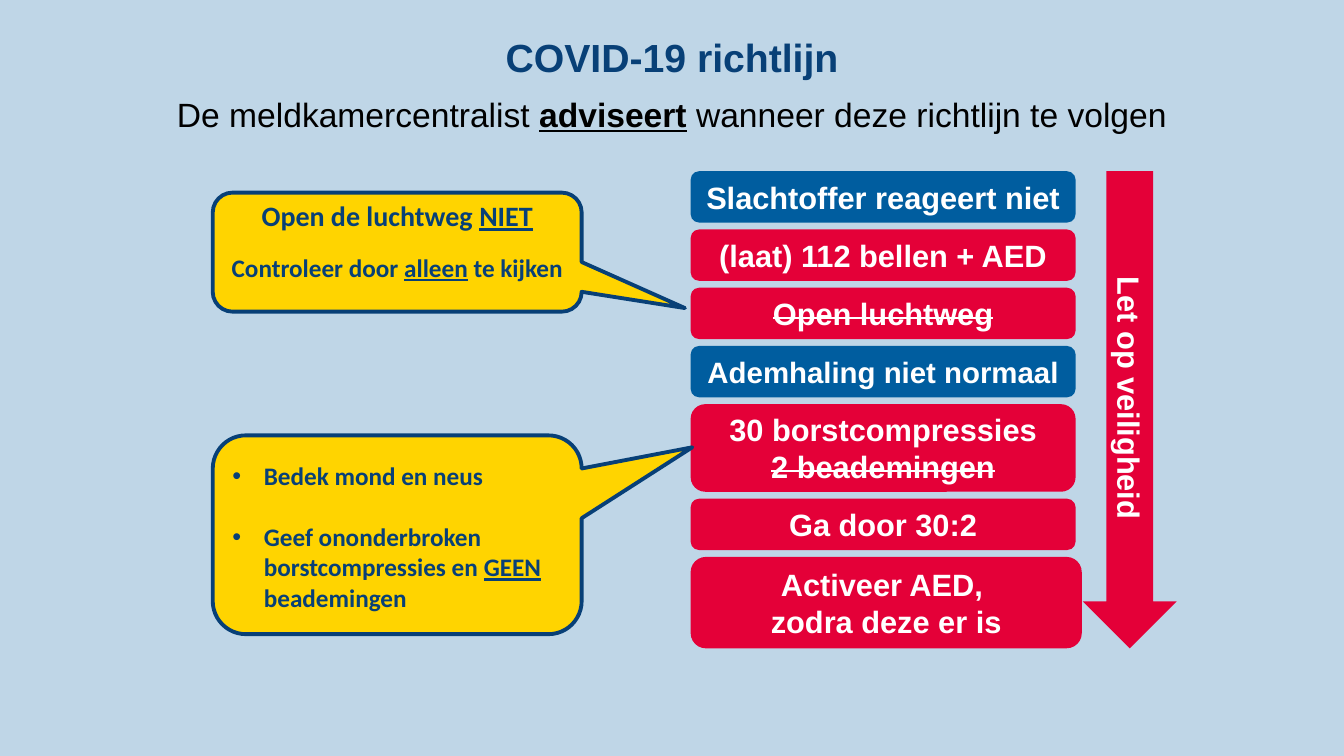
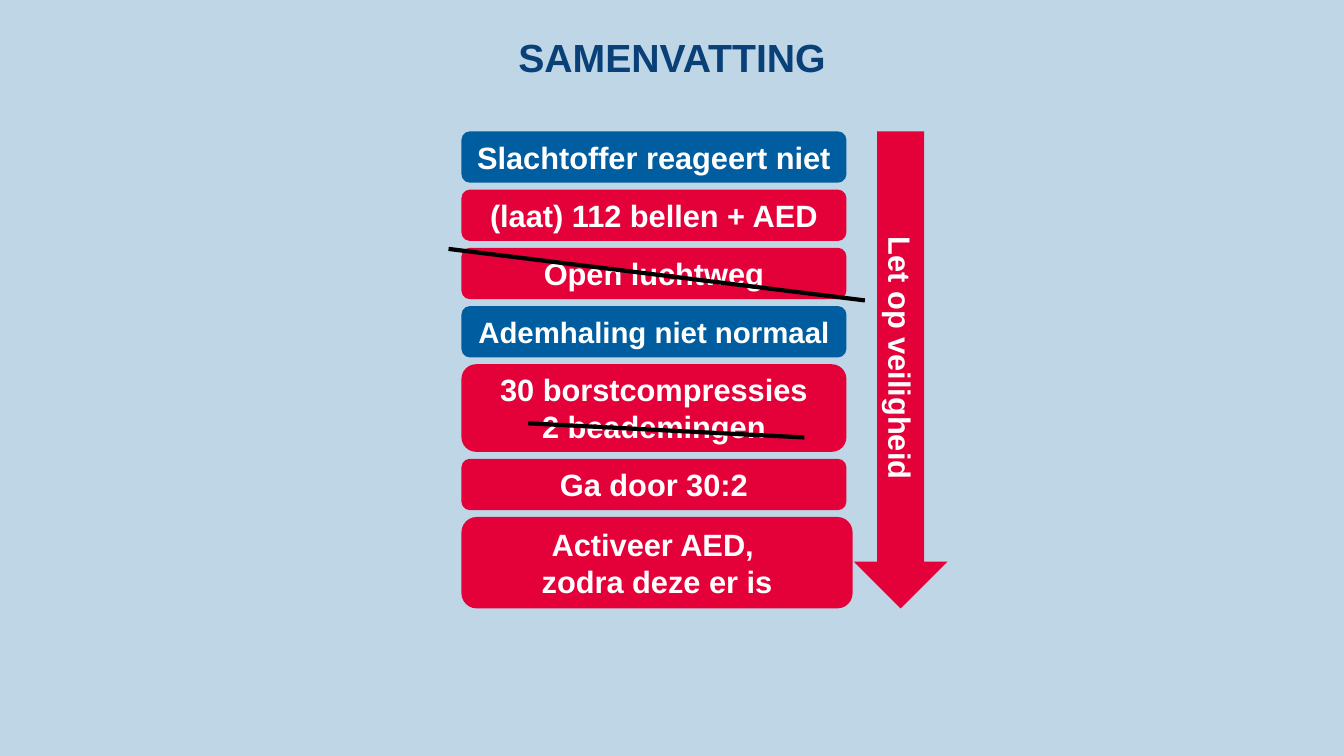
import pptx
import pptx.dml.color
import pptx.enum.shapes
import pptx.enum.text
import pptx.util
from lxml import etree
from pptx.oxml.ns import qn

Pt = pptx.util.Pt
SHAPE = pptx.enum.shapes.MSO_SHAPE
ALIGN = pptx.enum.text.PP_ALIGN
ANCHOR = pptx.enum.text.MSO_ANCHOR

COLORS = {
    "background": "BFD6E7",
    "navy": "084077",
    "blue": "005D9F",
    "red": "E40038",
    "yellow": "FFD400",
    "white": "FFFFFF",
    "black": "000000",
}

# Lines, fill, height, width and text size of each step.
STEPS = [
    (["Slachtoffer reageert niet"], "blue", 36.7, 275, 22),
    (["(laat) 112 bellen + AED"], "red", 36.7, 275, 22),
    (["Open luchtweg"], "red", 36.7, 275, 22),
    (["Ademhaling niet normaal"], "blue", 36.7, 275, 21),
    (["30 borstcompressies", "2 beademingen"], "red", 62.6, 275, 22),
    (["Ga door 30:2"], "red", 36.7, 275, 22),
    (["Activeer AED, ", "zodra deze er is"], "red", 65.3, 279.4, 22),
]
STEP_GAP = 4.9


def rgb(name):
    return pptx.dml.color.RGBColor.from_string(COLORS[name])


class Slides:
    """Holds the deck, its style and the current page."""

    def __init__(self):
        self.deck = pptx.Presentation()
        self.deck.slide_width, self.deck.slide_height = Pt(960), Pt(540)
        self.page = None

    def new_page(self, title):
        self.page = self.deck.slides.add_slide(self.deck.slide_layouts[6])
        fill = self.page.background.fill
        fill.solid()
        fill.fore_color.rgb = rgb("background")
        box = self.text_box(240, 20, 480, 41)
        self.add_text(box, [title], 28, "navy", bold=True)

    def text_box(self, left, top, width, height):
        box = self.page.shapes.add_textbox(Pt(left), Pt(top), Pt(width), Pt(height))
        box.text_frame.word_wrap = True
        return box

    def add_text(self, box, lines, size, color, font="Arial", bold=False, bullet=False, gap=0):
        """Each line is a string or a list of (text, marks): b bold, u underline, s strike."""
        frame = box.text_frame
        for index, line in enumerate(lines):
            para = frame.add_paragraph() if index else frame.paragraphs[0]
            para.alignment = ALIGN.LEFT if bullet else ALIGN.CENTER
            if index and gap:
                para.space_before = Pt(gap)
            if bullet:
                self.add_bullet(para)
            para.font.name = font
            para.font.size = Pt(size)
            para.font.bold = bold
            para.font.color.rgb = rgb(color)
            for text, marks in [(line, "")] if isinstance(line, str) else line:
                span = para.add_run()
                span.text = text
                if "b" in marks:
                    span.font.bold = True
                if "u" in marks:
                    span.font.underline = True
                if "s" in marks:
                    span._r.get_or_add_rPr().set("strike", "sngStrike")

    def add_bullet(self, para):
        properties = para._p.get_or_add_pPr()
        properties.set("marL", str(Pt(22.5)))
        properties.set("indent", str(Pt(-22.5)))
        etree.SubElement(properties, qn("a:buFont")).set("typeface", "Arial")
        etree.SubElement(properties, qn("a:buChar")).set("char", "•")

    def shape(self, kind, left, top, width, height, fill):
        shape = self.page.shapes.add_shape(kind, Pt(left), Pt(top), Pt(width), Pt(height))
        shape.shadow.inherit = False
        shape.fill.solid()
        shape.fill.fore_color.rgb = rgb(fill)
        shape.line.fill.background()
        shape.text_frame.word_wrap = True
        shape.text_frame.vertical_anchor = ANCHOR.MIDDLE
        return shape

    def callout(self, top, height, tip, inset):
        """Yellow balloon; tip is its point relative to the centre, in widths and heights."""
        balloon = self.shape(SHAPE.ROUNDED_RECTANGULAR_CALLOUT, 152, top, 263.5, height, "yellow")
        balloon.adjustments[0], balloon.adjustments[1] = tip
        balloon.line.color.rgb = rgb("navy")
        balloon.line.width = Pt(2.75)
        balloon.text_frame.vertical_anchor = ANCHOR.TOP
        balloon.text_frame.margin_top = Pt(inset)
        return balloon

    def protocol(self, left, top, struck=()):
        """Stack of steps with the safety arrow beside it."""
        step_top = top
        for lines, fill, height, width, size in STEPS:
            step = self.shape(SHAPE.ROUNDED_RECTANGLE, left, step_top, width, height, fill)
            marked = [[(line, "s" if line in struck else "")] for line in lines]
            self.add_text(step, marked, size, "white", bold=True)
            step_top += height + STEP_GAP
        arrow = self.shape(SHAPE.DOWN_ARROW, left + 280.2, top, 67, step_top - STEP_GAP - top, "red")
        arrow.text_frame._txBody.bodyPr.set("vert", "vert")
        self.add_text(arrow, ["Let op veiligheid"], 22, "white", bold=True)

    def line(self, x1, y1, x2, y2):
        line = self.page.shapes.add_connector(
            pptx.enum.shapes.MSO_CONNECTOR.STRAIGHT, Pt(x1), Pt(y1), Pt(x2), Pt(y2))
        line.line.color.rgb = rgb("black")
        line.line.width = Pt(3)
        etree.SubElement(line._element.spPr, qn("a:effectLst"))


def guideline_page(slides):
    slides.new_page("COVID-19 richtlijn")
    subtitle = slides.text_box(79.2, 52.6, 801.4, 61.2)
    subtitle.text_frame.vertical_anchor = ANCHOR.MIDDLE
    slides.add_text(subtitle, [[("De meldkamercentralist ", ""), ("adviseert", "bu"),
                                (" wanneer deze richtlijn te volgen", "")]], 24, "black")
    subtitle.text_frame.paragraphs[0].line_spacing = 0.9
    slides.protocol(493.3, 122.3, struck=("Open luchtweg", "2 beademingen"))

    airway = slides.callout(137.6, 85, (0.78, 0.47), 0)
    slides.add_text(airway, [[("Open de luchtweg ", ""), ("NIET", "u")],
                             [("Controleer door ", ""), ("alleen", "u"), (" te kijken", "")]],
                    18, "navy", "Calibri", bold=True, gap=14.5)
    airway.text_frame.paragraphs[0].font.size = Pt(20)

    compressions = slides.callout(311, 142, (0.8, -0.44), 11)
    slides.add_text(compressions, ["Bedek mond en neus",
                                   [("Geef ononderbroken borstcompressies en ", ""),
                                    ("GEEN", "u"), (" beademingen", "")]],
                    18, "navy", "Calibri", bold=True, bullet=True, gap=22)


def summary_page(slides):
    slides.new_page("SAMENVATTING")
    slides.protocol(329.6, 93.8)
    slides.line(320.4, 177.8, 617.8, 214.6)
    slides.line(377.3, 302.4, 574.6, 312.5)


def main():
    slides = Slides()
    guideline_page(slides)
    summary_page(slides)
    slides.deck.save("out.pptx")


if __name__ == "__main__":
    main()
